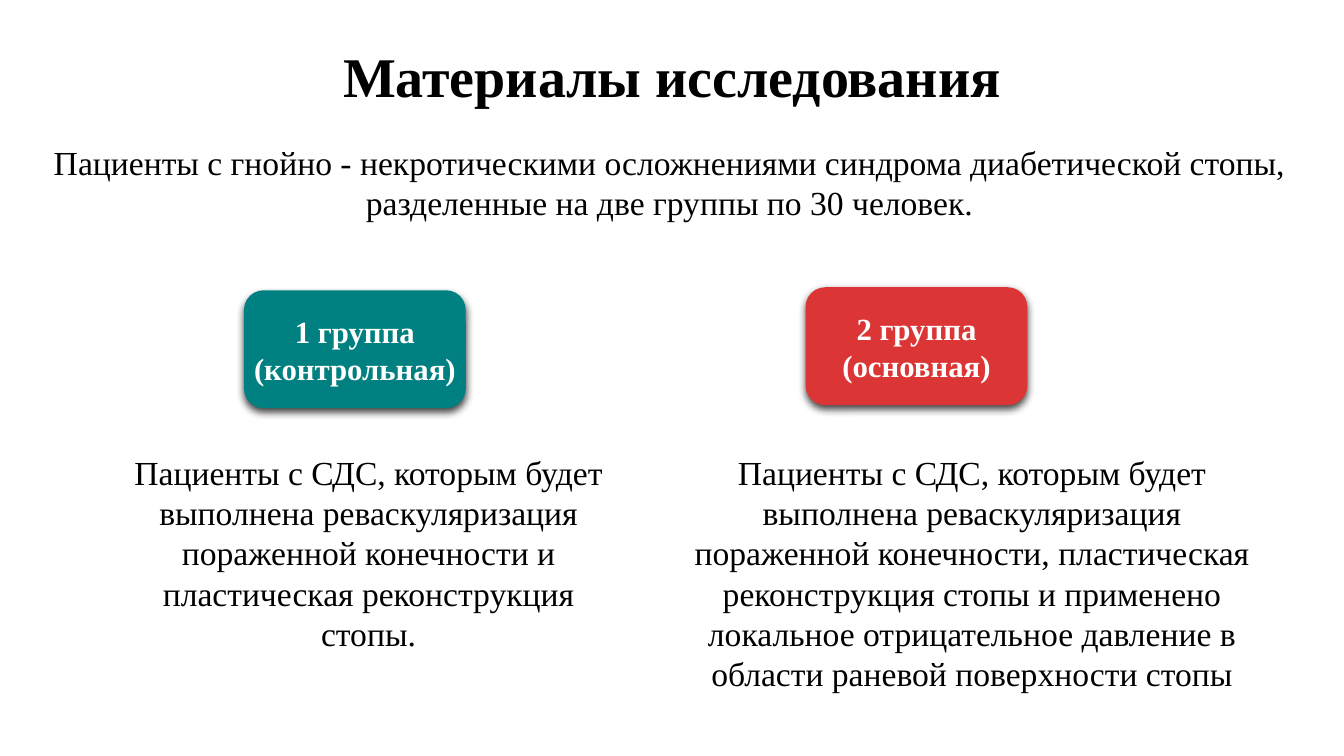
from lxml import etree
from pptx import Presentation, util as u
from pptx.dml.color import RGBColor
from pptx.enum import shapes, text
from pptx.oxml import ns

BLACK = RGBColor(0x00, 0x00, 0x00)
WHITE = RGBColor(0xFF, 0xFF, 0xFF)
TEAL = RGBColor(0x00, 0x80, 0x80)
RED = RGBColor(0xDB, 0x35, 0x35)
FONT = "Times New Roman"
WIDTH, HEIGHT = 13.33, 7.5
CARD_W, CARD_H = 2.2, 1.17

GROUPS = [
    ((2.42, 2.88), TEAL, ["1 группа", "(контрольная)"], (1.11, 4.43, 5.09, 2.12),
     "Пациенты с СДС, которым будет выполнена реваскуляризация пораженной "
     "конечности и пластическая реконструкция стопы."),
    ((7.99, 2.85), RED, ["2 группа", "(основная)"], (6.64, 4.43, 6, 2.52),
     "Пациенты с СДС, которым будет выполнена реваскуляризация пораженной "
     "конечности, пластическая реконструкция стопы и применено локальное "
     "отрицательное давление в области раневой поверхности стопы"),
]


def inches(box):
    return [u.Inches(v) for v in box]


def add_shadow(parent, blur, dist, angle, alpha):
    for old in parent.findall(ns.qn("a:effectLst")):
        parent.remove(old)
    effects = etree.SubElement(parent, ns.qn("a:effectLst"))
    shadow = etree.SubElement(effects, ns.qn("a:outerShdw"), blurRad=str(u.Pt(blur)),
                              dist=str(u.Pt(dist)), dir=str(angle * 60000),
                              algn="ctr", rotWithShape="0")
    color = etree.SubElement(shadow, ns.qn("a:srgbClr"), val=str(BLACK))
    etree.SubElement(color, ns.qn("a:alpha"), val=str(alpha * 1000))


def write(tf, lines, size, color, bold=False):
    tf.word_wrap = True
    for i, line in enumerate(lines):
        p = tf.add_paragraph() if i else tf.paragraphs[0]
        p.add_run().text = line
        p.alignment = text.PP_ALIGN.CENTER
        p.font.name, p.font.size = FONT, u.Pt(size)
        p.font.bold, p.font.color.rgb = bold, color


def add_title(s, box):
    title = s.shapes.title
    title.left, title.top, title.width, title.height = inches(box)
    tf = title.text_frame
    tf.vertical_anchor = text.MSO_ANCHOR.MIDDLE
    write(tf, ["Материалы исследования"], 40, BLACK, True)
    r = tf.paragraphs[0].runs[0]
    add_shadow(r.font._element, 3, 2, 45, 50)


def add_body(s, box, line):
    tf = s.shapes.add_textbox(*inches(box)).text_frame
    write(tf, [line], 24, BLACK)


def add_card(s, box, color, lines):
    card = s.shapes.add_shape(shapes.MSO_SHAPE.ROUNDED_RECTANGLE, *inches(box))
    card.shadow.inherit = False
    card.fill.solid()
    card.fill.fore_color.rgb = color
    card.line.fill.background()
    add_shadow(card._element.spPr, 6, 3, 90, 75)
    tf = card.text_frame
    tf.margin_left = tf.margin_right = 0
    tf.vertical_anchor = text.MSO_ANCHOR.MIDDLE
    write(tf, lines, 22, WHITE, True)


def main():
    prs = Presentation()
    prs.slide_width, prs.slide_height = inches((WIDTH, HEIGHT))
    s = prs.slides.add_slide(prs.slide_layouts[5])
    add_title(s, (0, 0.22, WIDTH, 1.06))
    add_body(s, (0.21, 1.36, 12.86, 0.91),
             "Пациенты с гнойно - некротическими осложнениями синдрома "
             "диабетической стопы, разделенные на две группы по 30 человек.")
    for corner, color, label, body_box, body in GROUPS:
        add_card(s, (*corner, CARD_W, CARD_H), color, label)
        add_body(s, body_box, body)
    prs.save("out.pptx")


if __name__ == "__main__":
    main()
